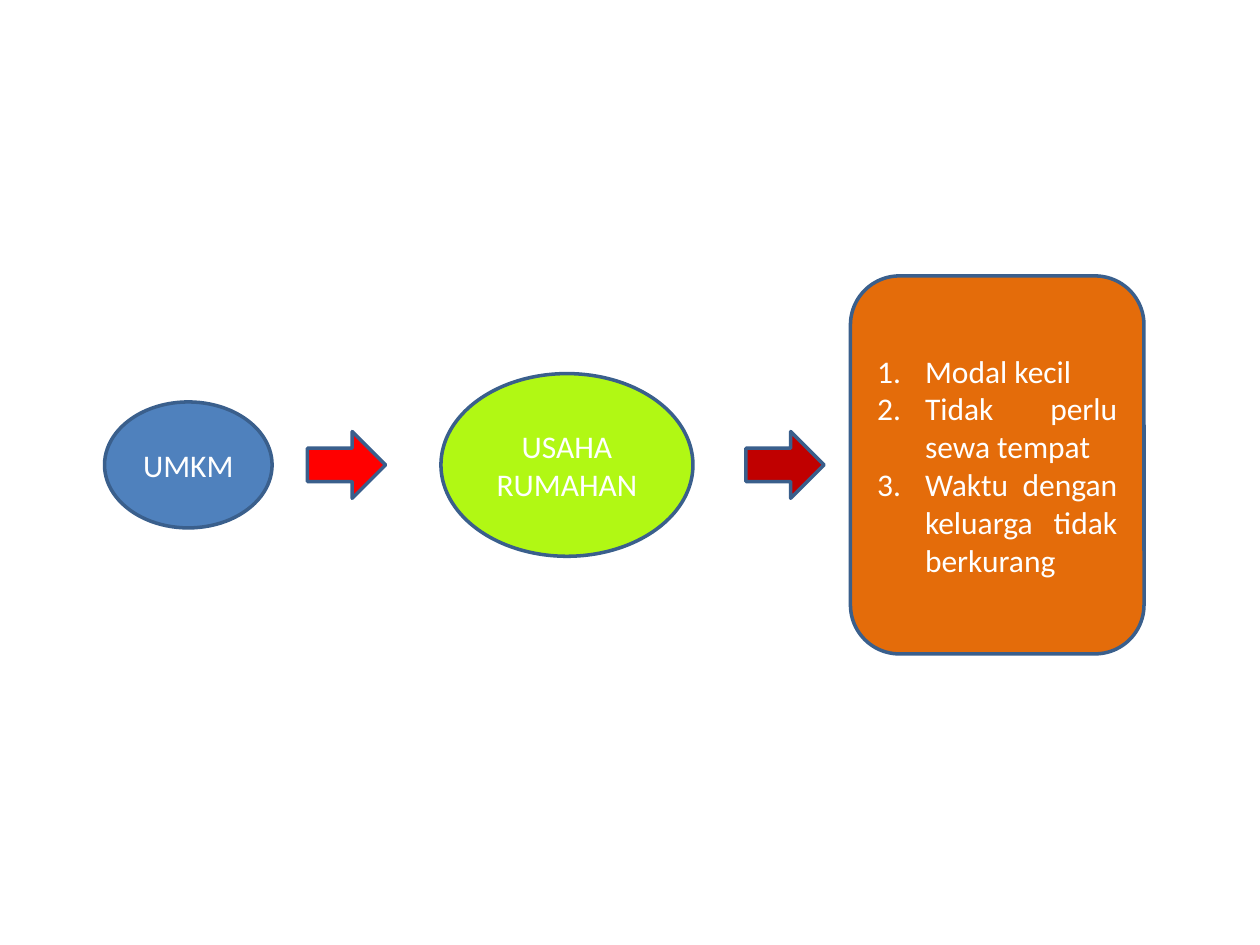
from lxml import etree
from pptx import Presentation
from pptx import util as u
from pptx.dml.color import RGBColor
from pptx.enum import shapes, text
from pptx.oxml.ns import qn

WHITE = RGBColor(0xFF, 0xFF, 0xFF)
OUTLINE = RGBColor(0x3A, 0x5F, 0x8C)
BLUE = RGBColor(0x4F, 0x81, 0xBD)
LIME = RGBColor(0xB1, 0xF8, 0x14)
RED = RGBColor(0xFF, 0x00, 0x00)
DARK_RED = RGBColor(0xC0, 0x00, 0x00)
ORANGE = RGBColor(0xE4, 0x6C, 0x0A)

prs = Presentation()
prs.slide_width, prs.slide_height = u.Inches(10), u.Inches(7.5)
s = prs.slides.add_slide(prs.slide_layouts[6])

# Every step of the flow is centred on one horizontal axis
AXIS = 3.69
INDENT = u.Inches(0.38)
S = shapes.MSO_SHAPE
benefits = ["Modal kecil", "Tidak perlu sewa tempat",
            "Waktu dengan keluarga tidak berkurang"]

# Kind, left, width, height, fill, lines of text
flow = [
    (S.OVAL, 0.83, 1.33, 1, BLUE, ["UMKM"]),
    (S.RIGHT_ARROW, 2.44, 0.62, 0.53, RED, []),
    (S.OVAL, 3.5, 2, 1.45, LIME, ["USAHA RUMAHAN"]),
    (S.RIGHT_ARROW, 5.92, 0.62, 0.53, DARK_RED, []),
    (S.ROUNDED_RECTANGLE, 6.75, 2.33, 3, ORANGE, benefits),
]

for kind, left, width, height, fill, lines in flow:
    sp = s.shapes.add_shape(kind, u.Inches(left), u.Inches(AXIS - height / 2),
                            u.Inches(width), u.Inches(height))
    sp.shadow.inherit = False
    sp.fill.solid()
    sp.fill.fore_color.rgb = fill
    sp.line.color.rgb = OUTLINE
    sp.line.width = u.Pt(2)

    tf = sp.text_frame
    tf.word_wrap = True
    tf.vertical_anchor = text.MSO_ANCHOR.MIDDLE
    for i, line in enumerate(lines):
        p = tf.add_paragraph() if i else tf.paragraphs[0]
        p.text = line
        p.alignment = text.PP_ALIGN.CENTER
        p.font.name, p.font.size = "Calibri", u.Pt(18)
        p.font.color.rgb = WHITE

        # The benefits form a justified, numbered list
        if lines is benefits:
            p.alignment = text.PP_ALIGN.JUSTIFY
            pPr = p._p.get_or_add_pPr()
            pPr.set("marL", str(INDENT))
            pPr.set("indent", str(-INDENT))
            number = etree.Element(qn("a:buAutoNum"), type="arabicPeriod")
            pPr.insert(0, number)

prs.save("out.pptx")
